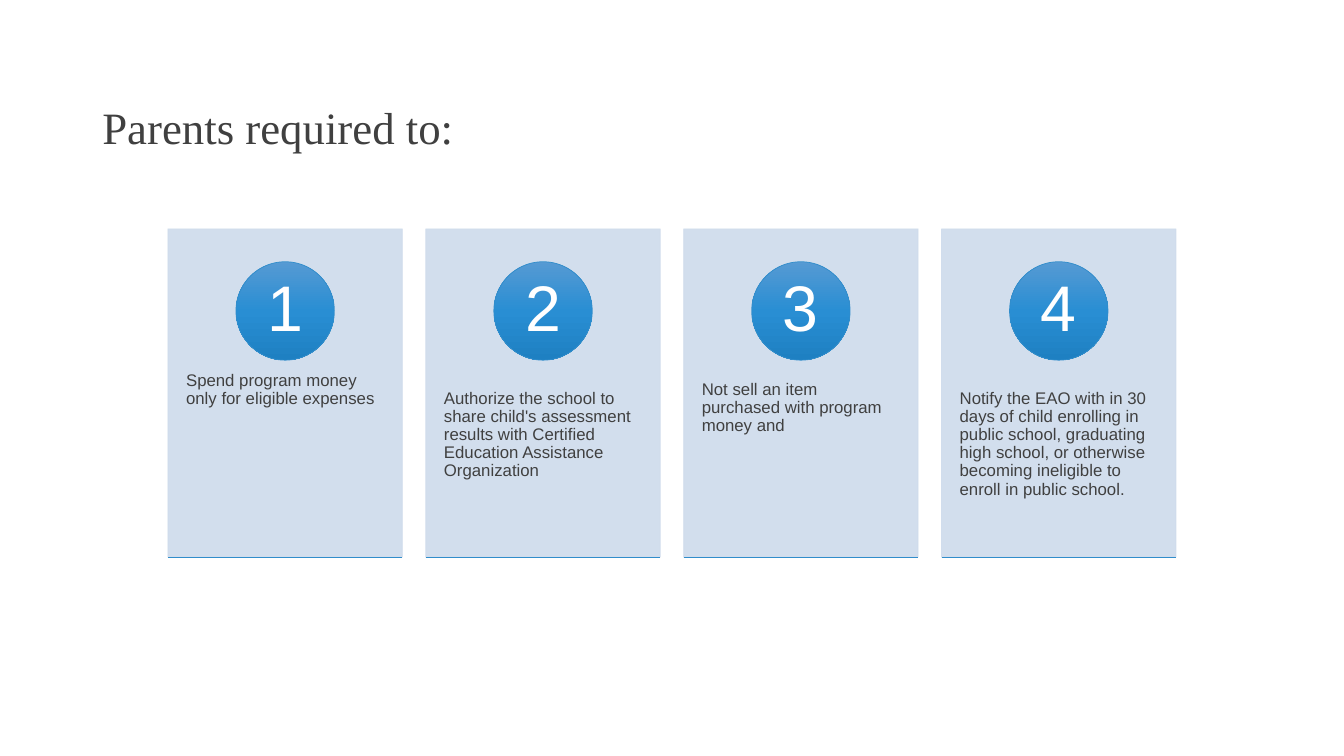
from copy import deepcopy

from pptx import Presentation
from pptx.dml.color import RGBColor
from pptx.enum.shapes import MSO_CONNECTOR, MSO_SHAPE
from pptx.enum.text import MSO_ANCHOR, PP_ALIGN
from pptx.oxml.ns import qn
from pptx.util import Inches, Pt
from lxml import etree

RECTANGLE, OVAL = MSO_SHAPE.RECTANGLE, MSO_SHAPE.OVAL
STRAIGHT = MSO_CONNECTOR.STRAIGHT
TOP, MIDDLE, BOTTOM = MSO_ANCHOR.TOP, MSO_ANCHOR.MIDDLE, MSO_ANCHOR.BOTTOM
LEFT, CENTER = PP_ALIGN.LEFT, PP_ALIGN.CENTER

COLUMNS, ROWS = 160, 90  # grid over the whole slide

REQUIREMENTS = [
    "Spend program money only for eligible expenses",
    "Authorize the school to share child's assessment results with "
    "Certified Education Assistance Organization",
    "Not sell an item purchased with program money and",
    "Notify the EAO with in 30 days of child enrolling in public school, "
    "graduating high school, or otherwise becoming ineligible to enroll "
    "in public school.",
]


def rgb(code):
    return RGBColor.from_string(code)


class RequirementSlide:
    heading_font, body_font = "Times New Roman", "Arial"
    ink, white, card_tint, accent = "404040", "FFFFFF", "CEDBEC", "318DCB"
    badge_stops = [(0, "569AD3"), (0.5, "298ED3"), (1, "1E80C2")]
    hairline = Pt(0.5)

    def __init__(self, deck):
        self.slide = deck.slides.add_slide(deck.slide_layouts[6])
        self.column = deck.slide_width / COLUMNS
        self.row = deck.slide_height / ROWS

    def place(self, x, y, w, h):
        return (round(x * self.column), round(y * self.row),
                round(w * self.column), round(h * self.row))

    def set_words(self, frame, words, font, size, color,
                  anchor=TOP, align=LEFT, insets=(0.1, 0.05)):
        frame.word_wrap = True
        frame.vertical_anchor = anchor
        frame.margin_left = frame.margin_right = Inches(insets[0])
        frame.margin_top = frame.margin_bottom = Inches(insets[1])
        paragraph = frame.paragraphs[0]
        paragraph.alignment = align
        paragraph.line_spacing = 0.9
        run = paragraph.add_run()
        run.text = words
        run.font.name, run.font.size = font, Pt(size)
        run.font.color.rgb = rgb(color)

    def text(self, area, words, font, size, **layout):
        box = self.slide.shapes.add_textbox(*self.place(*area))
        self.set_words(box.text_frame, words, font, size, self.ink, **layout)

    def shape(self, kind, area, outline):
        shape = self.slide.shapes.add_shape(kind, *self.place(*area))
        shape.shadow.inherit = False
        shape.line.color.rgb = rgb(outline)
        shape.line.width = self.hairline
        return shape

    def panel(self, area):
        panel = self.shape(RECTANGLE, area, self.card_tint)
        panel.fill.solid()
        panel.fill.fore_color.rgb = rgb(self.card_tint)
        # Fill and outline are 90% opaque
        for color in panel._element.spPr.iter(qn("a:srgbClr")):
            etree.SubElement(color, qn("a:alpha"), val="90000")

    def badge(self, area, number):
        badge = self.shape(OVAL, area, self.accent)
        badge.fill.gradient()
        badge.fill.gradient_angle = 270
        stop_list = next(badge._element.spPr.iter(qn("a:gsLst")))
        stop_list.append(deepcopy(stop_list[0]))
        for stop, (position, color) in zip(badge.fill.gradient_stops,
                                           self.badge_stops):
            stop.position = position
            stop.color.rgb = rgb(color)
        self.set_words(badge.text_frame, str(number), self.body_font, 46,
                       self.white, MIDDLE, CENTER, (0.08, 0.01))

    def rule(self, x, y, length):
        left, top, width, _ = self.place(x, y, length, 0)
        rule = self.slide.shapes.add_connector(STRAIGHT, left, top,
                                               left + width, top)
        rule.line.color.rgb = rgb(self.accent)
        rule.line.width = self.hairline
        etree.SubElement(rule._element.spPr, qn("a:effectLst"))

    def card(self, x, y, w, h, number, requirement):
        self.panel((x, y, w, h))
        self.text((x, y + 0.38 * h, w, 0.6 * h), requirement,
                  self.body_font, 12, insets=(0.18, 0.36))
        diameter = 0.3 * h
        self.badge((x + (w - diameter) / 2, y + 0.1 * h, diameter, diameter),
                   number)
        self.rule(x, y + h, w)


def main():
    deck = Presentation()
    deck.slide_width, deck.slide_height = Inches(13.33), Inches(7.5)
    page = RequirementSlide(deck)

    # Title
    page.text((11, 4.8, 129, 14.16), "Parents required to:",
              page.heading_font, 32, anchor=BOTTOM)

    # Row of cards, with gaps a tenth of a card wide
    cards_left, cards_top, cards_width = 20, 27.25, 120
    count = len(REQUIREMENTS)
    card_width = cards_width / (count + 0.1 * (count - 1))
    for index, requirement in enumerate(REQUIREMENTS):
        page.card(cards_left + index * 1.1 * card_width, cards_top,
                  card_width, 1.4 * card_width, index + 1, requirement)

    deck.save("out.pptx")


if __name__ == "__main__":
    main()
